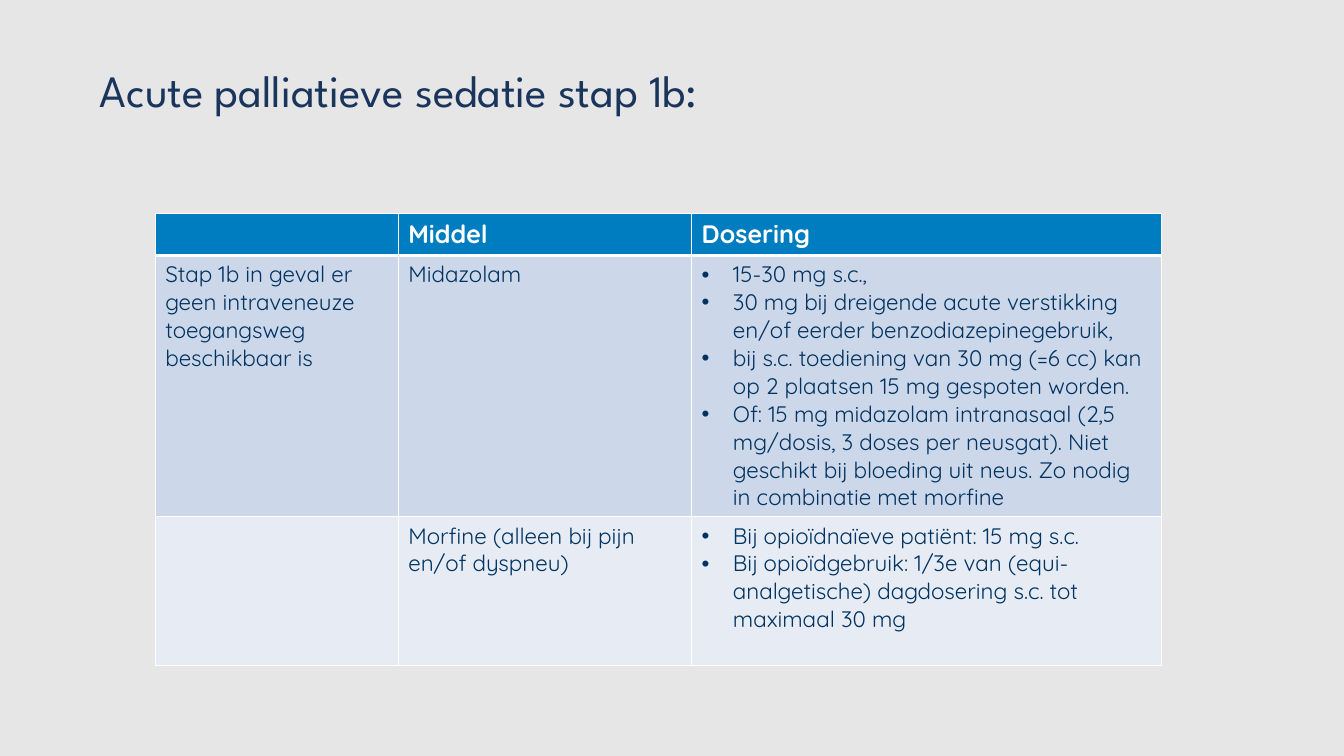
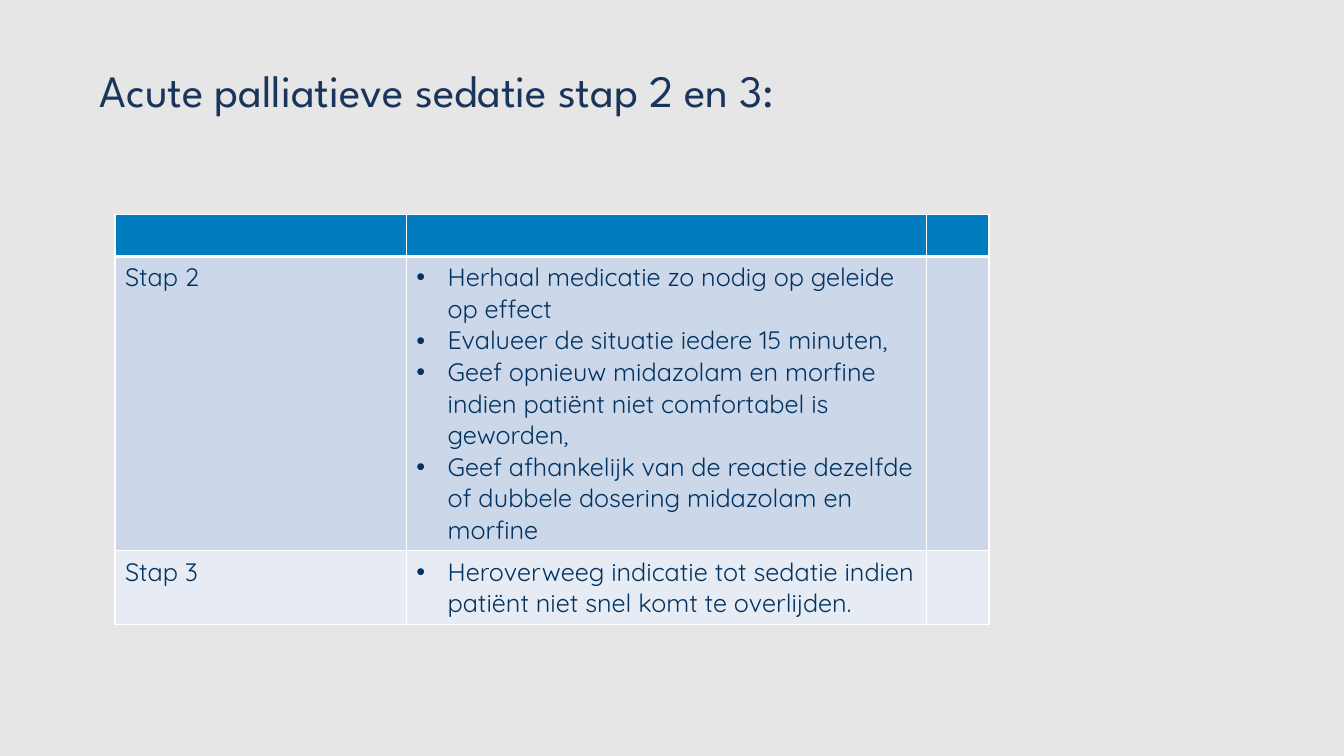
from lxml import etree
from pptx import Presentation
from pptx.dml.color import RGBColor
from pptx.enum.text import MSO_ANCHOR, PP_ALIGN
from pptx.oxml.ns import qn
from pptx.util import Pt

LEFT = PP_ALIGN.LEFT
MIDDLE = MSO_ANCHOR.MIDDLE

PX = 9144
SLIDE_SIZE = (1333, 750)
TITLE_BOX = (89, 30, 1156, 125)
BULLET_INDENT = 31
TITLE_FONT = "League Spartan"
BODY_FONT = "Quicksand"
TITLE_SIZE = 32
HEADER_SIZE = 18
THIN, THICK = 1, 3

BACKGROUND = RGBColor(0xE7, 0xE6, 0xE6)
TITLE_BLUE = RGBColor(0x1A, 0x35, 0x5C)
HEADER_BLUE = RGBColor(0x00, 0x7C, 0xC1)
TEXT_BLUE = RGBColor(0x00, 0x33, 0x61)
WHITE = RGBColor(0xFF, 0xFF, 0xFF)
BANDS = (RGBColor(0xCC, 0xD7, 0xE9), RGBColor(0xE7, 0xEC, 0xF4))

# A string is plain text; a list is a bulleted list.
SLIDES = [
    {
        "title": "Acute palliatieve sedatie stap 1b:",
        "origin": (154, 212),
        "columns": (241, 291, 466),
        "rows": (41, 259, 148),
        "size": 16,
        "cells": [
            ("", "Middel", "Dosering"),
            (
                "Stap 1b in geval er geen intraveneuze toegangsweg beschikbaar is",
                "Midazolam",
                [
                    "15-30 mg s.c.,",
                    "30 mg bij dreigende acute verstikking en/of eerder benzodiazepinegebruik,",
                    "bij s.c. toediening van 30 mg (=6 cc) kan op 2 plaatsen 15 mg gespoten worden.",
                    "Of: 15 mg midazolam intranasaal (2,5 mg/dosis, 3 doses per neusgat). "
                    "Niet geschikt bij bloeding uit neus. Zo nodig in combinatie met morfine",
                ],
            ),
            (
                "",
                "Morfine (alleen bij pijn en/of dyspneu)",
                [
                    "Bij opioïdnaïeve patiënt: 15 mg s.c.",
                    "Bij opioïdgebruik: 1/3e van (equi-analgetische) dagdosering s.c. "
                    "tot maximaal 30 mg",
                ],
            ),
        ],
    },
    {
        "title": "Acute palliatieve sedatie stap 2 en 3:",
        "origin": (114, 213),
        "columns": (289, 516, 62),
        "rows": (41, 292, 73),
        "size": 18,
        "cells": [
            ("", "", ""),
            (
                "Stap 2",
                [
                    "Herhaal medicatie zo nodig op geleide op effect",
                    "Evalueer de situatie iedere 15 minuten,",
                    "Geef opnieuw midazolam en morfine indien patiënt niet comfortabel is geworden,",
                    "Geef afhankelijk van de reactie dezelfde of dubbele dosering midazolam en morfine",
                ],
                "",
            ),
            (
                "Stap 3",
                ["Heroverweeg indicatie tot sedatie indien patiënt niet snel komt te overlijden."],
                "",
            ),
        ],
    },
]


def scaled(lengths):
    return [length * PX for length in lengths]


def style(paragraph, name, size, color, bold=False):
    font = paragraph.font
    font.name, font.size, font.bold = name, Pt(size), bold
    font.color.rgb = color


def add_bullet(paragraph):
    properties = paragraph._p.get_or_add_pPr()
    properties.set("marL", str(BULLET_INDENT * PX))
    properties.set("indent", str(-BULLET_INDENT * PX))
    etree.SubElement(properties, qn("a:buFont")).set("typeface", "Arial")
    etree.SubElement(properties, qn("a:buChar")).set("char", "•")


def add_borders(cell, row):
    properties = cell._tc.get_or_add_tcPr()
    widths = {
        "lnL": THIN,
        "lnR": THIN,
        "lnT": THICK if row == 1 else THIN,
        "lnB": THICK if row == 0 else THIN,
    }
    for side, width in widths.items():
        line = etree.SubElement(properties, qn(f"a:{side}"), w=str(Pt(width)))
        fill = etree.SubElement(line, qn("a:solidFill"))
        etree.SubElement(fill, qn("a:srgbClr")).set("val", str(WHITE))


def fill_cell(cell, content, row, size):
    header = row == 0
    add_borders(cell, row)
    cell.fill.solid()
    cell.fill.fore_color.rgb = HEADER_BLUE if header else BANDS[(row - 1) % 2]
    bulleted = isinstance(content, list)
    frame = cell.text_frame
    frame.text = "\n".join(content) if bulleted else content
    for paragraph in frame.paragraphs:
        if bulleted:
            add_bullet(paragraph)
        style(paragraph, BODY_FONT, HEADER_SIZE if header else size,
              WHITE if header else TEXT_BLUE, header)


def add_title(page, text):
    title = page.shapes.title
    title.left, title.top, title.width, title.height = scaled(TITLE_BOX)
    frame = title.text_frame
    frame.text = text
    frame.vertical_anchor = MIDDLE
    paragraph = frame.paragraphs[0]
    paragraph.alignment = LEFT
    paragraph.line_spacing = 0.9
    style(paragraph, TITLE_FONT, TITLE_SIZE, TITLE_BLUE)


def add_dosing_table(page, content):
    columns, rows = scaled(content["columns"]), scaled(content["rows"])
    table = page.shapes.add_table(
        len(rows), len(columns), *scaled(content["origin"]), sum(columns), sum(rows)
    ).table
    for column, width in zip(table.columns, columns):
        column.width = width
    for row, height in zip(table.rows, rows):
        row.height = height
    for row, values in enumerate(content["cells"]):
        for column, value in enumerate(values):
            fill_cell(table.cell(row, column), value, row, content["size"])


def main():
    deck = Presentation()
    deck.slide_width, deck.slide_height = scaled(SLIDE_SIZE)
    background = deck.slide_master.background.fill
    background.solid()
    background.fore_color.rgb = BACKGROUND
    for content in SLIDES:
        page = deck.slides.add_slide(deck.slide_layouts.get_by_name("Title Only"))
        add_title(page, content["title"])
        add_dosing_table(page, content)
    deck.save("out.pptx")


if __name__ == "__main__":
    main()
